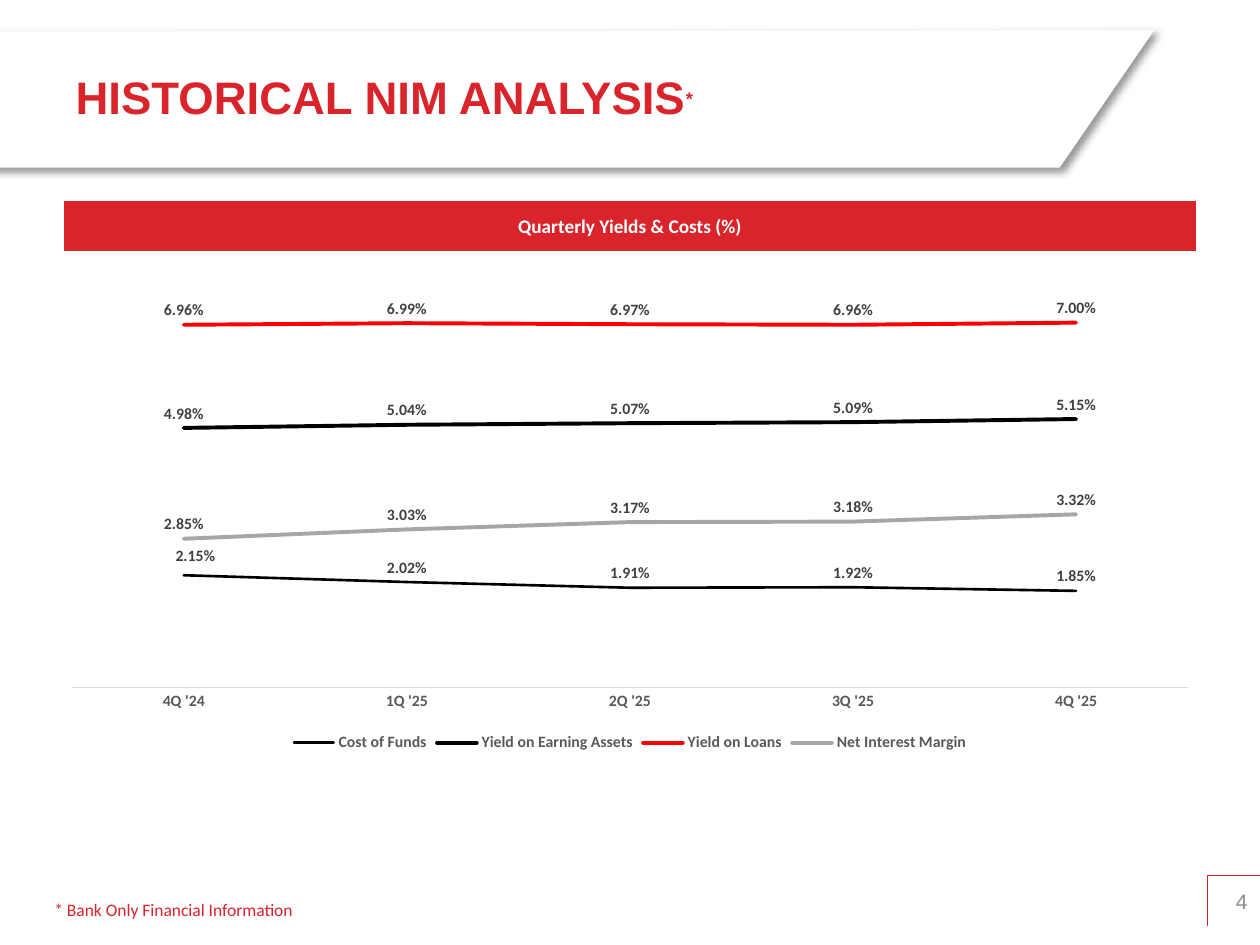
from dataclasses import dataclass

from lxml.etree import SubElement
from pptx import Presentation
from pptx.chart.data import CategoryChartData
from pptx.dml.color import RGBColor
from pptx.enum.chart import XL_CHART_TYPE as ChartType
from pptx.enum.chart import XL_LABEL_POSITION as LabelPosition
from pptx.enum.chart import XL_LEGEND_POSITION as LegendPosition
from pptx.enum.chart import XL_TICK_MARK as TickMark
from pptx.enum.shapes import MSO_CONNECTOR as Connector
from pptx.enum.text import MSO_ANCHOR as Anchor
from pptx.enum.text import MSO_AUTO_SIZE as AutoSize
from pptx.enum.text import PP_ALIGN as Align
from pptx.oxml import parse_xml
from pptx.oxml.ns import nsdecls, qn
from pptx.util import Pt

TITLE, TITLE_MARK = "HISTORICAL NIM ANALYSIS", "*"
TABLE_HEADING = "Quarterly Yields & Costs (%)"
FOOTNOTE = "* Bank Only Financial Information"
PAGE_NUMBER = "4"
QUARTERS = ["4Q '24", "1Q '25", "2Q '25", "3Q '25", "4Q '25"]
SERIES = [
    ("Cost of Funds", [0.0215, 0.0202, 0.0191, 0.0192, 0.0185], "000000", 1.5),
    ("Yield on Earning Assets", [0.0498, 0.0504, 0.0507, 0.0509, 0.0515], "000000", 2.25),
    ("Yield on Loans", [0.0696, 0.0699, 0.0697, 0.0696, 0.07], "FF0000", 2.25),
    ("Net Interest Margin", [0.0285, 0.0303, 0.0317, 0.0318, 0.0332], "A6A6A6", 2.25),
]
PERCENT = "0.00%"
PLOT_AREA = dict(x=0.02, y=0.02, w=0.96, h=0.84)
FIRST_LABEL_SHIFT = dict(x=0.01, y=-0.01)

WIDTH, HEIGHT = 720, 540
BANNER = [(-12, 18), (659.5, 17.3), (605.5, 95.8), (-12, 95.8)]
TITLE_BOX = (36, 18, 570, 74)
TABLE_BOX = (36, 114.5, 648, 29.5)
CHART_BOX = (28, 149, 664, 283.5)
FOOTNOTE_BOX = (24, 510, 153, 19.4)
PAGE_LEFT, PAGE_TOP, PAGE_BOTTOM = 690, 500.4, 529.2


@dataclass(frozen=True)
class Theme:
    heading_font: str = "Arial"
    body_font: str = "Calibri"
    red: str = "D9242C"
    rule: str = "D91F27"
    white: str = "FFFFFF"
    number: str = "8C8C8C"
    axis_text: str = "595959"
    axis_line: str = "D9D9D9"
    label: str = "404040"
    black: str = "000000"
    title_size: float = 26
    mark_size: float = 18
    number_size: float = 12
    heading_size: float = 11
    note_size: float = 10
    chart_size: float = 9


THEME = Theme()


def points(values):
    return [Pt(value) for value in values]


def style(font, name, size, color, bold=False):
    font.name, font.size, font.bold = name, Pt(size), bold
    font.color.rgb = RGBColor.from_string(color)


def fill(target, color):
    target.fill.solid()
    target.fill.fore_color.rgb = RGBColor.from_string(color)


def line(target, color, width):
    target.color.rgb = RGBColor.from_string(color)
    target.width = Pt(width)


def manual_layout(**parts):
    modes = '<c:layoutTarget val="inner"/><c:xMode val="edge"/><c:yMode val="edge"/>' if "w" in parts else ""
    values = "".join(f'<c:{key} val="{value}"/>' for key, value in parts.items())
    return parse_xml(f'<c:layout {nsdecls("c")}><c:manualLayout>{modes}{values}</c:manualLayout></c:layout>')


def add_banner(page):
    (left, top), *corners = [points(corner) for corner in BANNER]
    builder = page.shapes.build_freeform(left, top)
    builder.add_line_segments(corners, close=True)
    banner = builder.convert_to_shape()
    fill(banner, THEME.white)
    banner.line.fill.background()
    banner._element.spPr.append(parse_xml(
        f'<a:effectLst {nsdecls("a")}><a:outerShdw blurRad="{Pt(4)}" dist="{Pt(3)}" dir="2700000" '
        f'algn="tl" rotWithShape="0"><a:srgbClr val="{THEME.black}"><a:alpha val="40000"/></a:srgbClr>'
        '</a:outerShdw></a:effectLst>'))
    page.shapes._spTree.insert(2, banner._element)


def add_title(page):
    box = page.shapes.title
    box.left, box.top, box.width, box.height = points(TITLE_BOX)
    frame = box.text_frame
    frame.auto_size, frame.vertical_anchor = AutoSize.NONE, Anchor.MIDDLE
    para = frame.paragraphs[0]
    para.alignment = Align.LEFT
    for text in (TITLE, TITLE_MARK):
        para.add_run().text = text
    style(para.font, THEME.heading_font, THEME.title_size, THEME.red, True)
    mark = para.runs[1].font
    mark.size = Pt(THEME.mark_size)
    mark._element.set("baseline", "30000")


def add_heading_table(page):
    graphic = page.shapes.add_table(1, 1, *points(TABLE_BOX))
    cell = graphic.table.cell(0, 0)
    cell.margin_left = cell.margin_right = cell.margin_top = Pt(0.7)
    cell.margin_bottom = 0
    cell.vertical_anchor = Anchor.MIDDLE
    cell.text = TABLE_HEADING
    para = cell.text_frame.paragraphs[0]
    para.alignment = Align.CENTER
    style(para.font, THEME.body_font, THEME.heading_size, THEME.white, True)
    properties = cell._tc.get_or_add_tcPr()
    for side in ("a:lnL", "a:lnR", "a:lnT", "a:lnB"):
        border = SubElement(properties, qn(side), w=str(Pt(1)))
        SubElement(SubElement(border, qn("a:solidFill")), qn("a:srgbClr"), val=THEME.white)
    fill(cell, THEME.red)


def add_yield_chart(page):
    data = CategoryChartData(number_format=PERCENT)
    data.categories = QUARTERS
    for name, values, *_ in SERIES:
        data.add_series(name, values)
    chart = page.shapes.add_chart(ChartType.LINE, *points(CHART_BOX), data).chart
    chart.has_title = False
    style(chart.font, THEME.body_font, THEME.note_size, THEME.black)
    chart.has_legend = True
    chart.legend.position = LegendPosition.BOTTOM
    chart.legend.include_in_layout = False
    style(chart.legend.font, THEME.body_font, THEME.chart_size, THEME.axis_text, True)

    category_axis, value_axis = chart.category_axis, chart.value_axis
    category_axis.major_tick_mark = TickMark.NONE
    style(category_axis.tick_labels.font, THEME.body_font, THEME.chart_size, THEME.axis_text, True)
    line(category_axis.format.line, THEME.axis_line, 0.75)
    value_axis.visible = value_axis.has_major_gridlines = False
    value_axis.minimum_scale, value_axis.maximum_scale = 0, 0.08
    value_axis.tick_labels.number_format = PERCENT

    plot = chart.plots[0]
    plot.vary_by_categories = False
    for series, (_, _, color, width) in zip(plot.series, SERIES):
        series.smooth = False
        line(series.format.line, color, width)
        series.format.line._get_or_add_ln().set("cap", "rnd")
        labels = series.data_labels
        labels.show_value, labels.position = True, LabelPosition.ABOVE
        labels.number_format, labels.number_format_is_linked = PERCENT, False
        style(labels.font, THEME.body_font, THEME.chart_size, THEME.label, True)

    first_label = plot.series[0].points[0].data_label
    first_label.position = LabelPosition.ABOVE
    style(first_label.font, THEME.body_font, THEME.chart_size, THEME.label, True)
    index = chart._chartSpace.xpath(".//c:dLbl/c:idx")[0]
    index.addnext(manual_layout(**FIRST_LABEL_SHIFT))

    plot_area = chart._chartSpace.xpath(".//c:plotArea")[0]
    for layout in plot_area.findall(qn("c:layout")):
        plot_area.remove(layout)
    plot_area.insert(0, manual_layout(**PLOT_AREA))


def add_text(page, bounds, text, font, size, color):
    frame = page.shapes.add_textbox(*points(bounds)).text_frame
    para = frame.paragraphs[0]
    para.text = text
    style(para.font, font, size, color)
    return frame


def add_footer(page):
    note = add_text(page, FOOTNOTE_BOX, FOOTNOTE, THEME.body_font, THEME.note_size, THEME.red)
    note.word_wrap, note.auto_size = False, AutoSize.SHAPE_TO_FIT_TEXT
    for end in ((PAGE_LEFT, PAGE_BOTTOM), (WIDTH, PAGE_TOP)):
        rule = page.shapes.add_connector(Connector.STRAIGHT, *points((PAGE_LEFT, PAGE_TOP, *end)))
        line(rule.line, THEME.rule, 0.75)
        SubElement(rule._element.spPr, qn("a:effectLst"))
    bounds = (PAGE_LEFT, PAGE_TOP, WIDTH - PAGE_LEFT, PAGE_BOTTOM - PAGE_TOP)
    number = add_text(page, bounds, PAGE_NUMBER, THEME.heading_font, THEME.number_size, THEME.number)
    number.word_wrap, number.vertical_anchor = True, Anchor.MIDDLE
    number.paragraphs[0].alignment = Align.RIGHT


def main():
    deck = Presentation()
    deck.slide_width, deck.slide_height = Pt(WIDTH), Pt(HEIGHT)
    page = deck.slides.add_slide(deck.slide_layouts[5])
    for add_part in (add_banner, add_title, add_heading_table, add_yield_chart, add_footer):
        add_part(page)
    deck.save("out.pptx")


if __name__ == "__main__":
    main()
